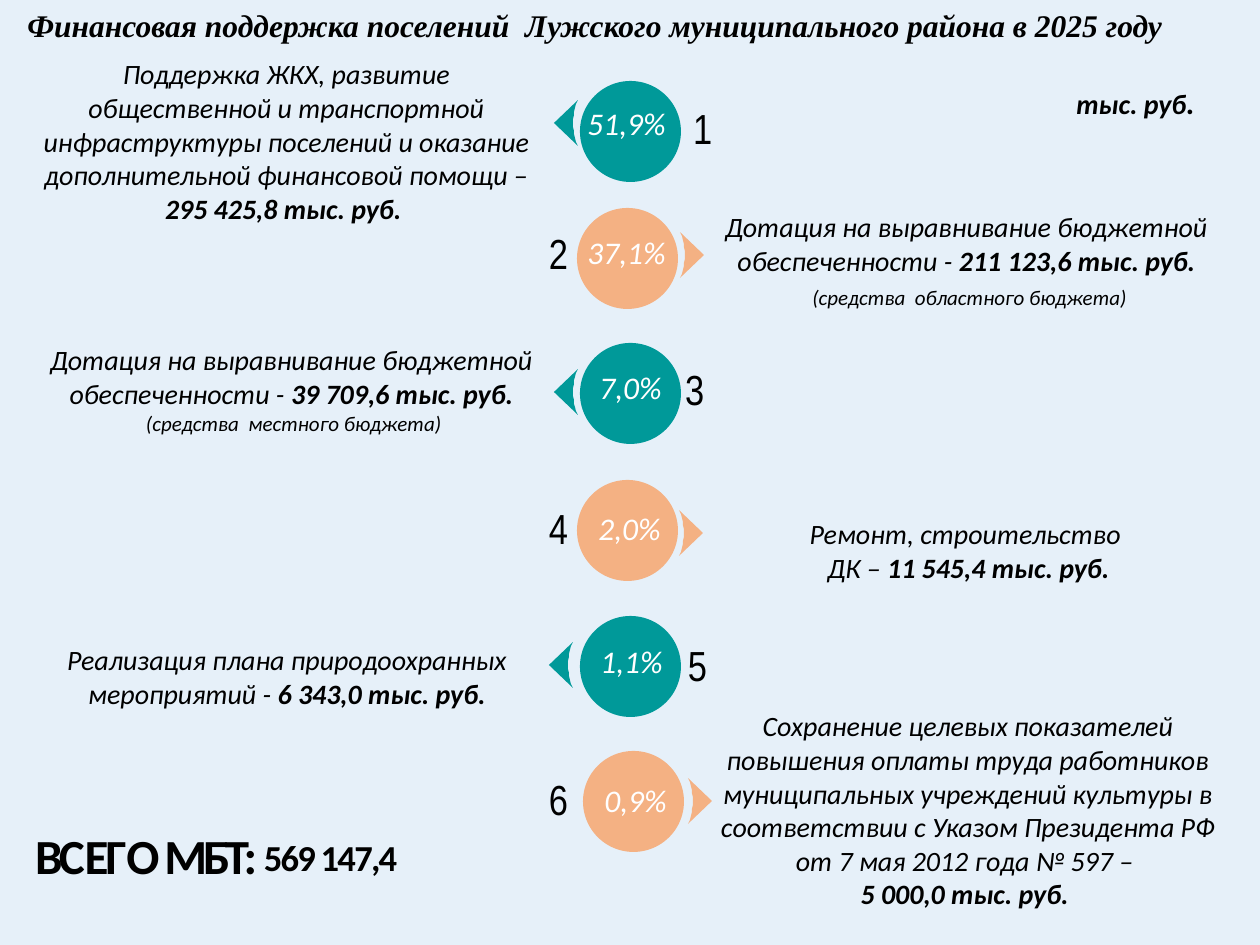
from dataclasses import dataclass

from pptx import Presentation
from pptx.dml.color import RGBColor
from pptx.enum.shapes import MSO_SHAPE as Shape
from pptx.enum.text import MSO_AUTO_SIZE as AutoSize, PP_ALIGN as Align
from pptx.util import Emu, Pt

SCALE = 914400 / 126
CIRCLE = 101
ARROW_LENGTH, ARROW_HALF_HEIGHT, ARROW_BULGE = 24, 23, 5
ARC_STEPS = 12


@dataclass(frozen=True)
class Theme:
    background: str = "E6F0F9"
    teal: str = "009999"
    peach: str = "F4B183"
    ink: str = "000000"
    white: str = "FFFFFF"
    body_font: str = "Calibri"
    title_font: str = "Times New Roman"
    number_font: str = "Arial Narrow"
    note: int = 12
    body: int = 16
    title: int = 18
    number: int = 24
    total_label: int = 28
    total_value: int = 36


THEME = Theme()

# number, percent, circle left/top, arrow tip x/y, percent box, number box
STEPS = [
    ("1", "51,9%", (580, 81), (554, 123), (575, 98, 106, 50), (693, 103, 9, 50)),
    ("2", "37,1%", (577, 208), (704, 255), (575, 227, 106, 50), (549, 228, 17, 50)),
    ("3", "7,0%", (580, 343), (554, 392), (587, 362, 91, 53), (685, 364, 17, 50)),
    ("4", "2,0%", (577, 480), (703, 533), (586, 503, 91, 53), (549, 503, 17, 50)),
    ("5", "1,1%", (580, 616), (549, 665), (588, 636, 91, 53), (688, 640, 17, 50)),
    ("6", "0,9%", (583, 751), (712, 801), (592, 775, 91, 53), (549, 774, 17, 50)),
]

# box, paragraphs made of (text, changes to the body style)
BOLD = {"bold": True}
NOTE = {"size": THEME.note}
DESCRIPTIONS = [
    ((33, 57, 507, 170), [[
        ("Поддержка ЖКХ, развитие общественной и транспортной инфраструктуры "
         "поселений и оказание дополнительной финансовой помощи – ", {}),
        ("295 425,8 тыс. руб. ", BOLD)]]),
    ((712, 210, 509, 102), [
        [("Дотация на выравнивание бюджетной обеспеченности - ", {}),
         ("211 123,6 тыс. руб.", BOLD)],
        [(" ", {}), ("(средства  областного бюджета)", NOTE)]]),
    ((34, 343, 515, 93), [
        [("Дотация на выравнивание бюджетной обеспеченности - ", {}),
         ("39 709,6 тыс. руб.", BOLD)],
        [(" (средства  местного бюджета)", NOTE)]]),
    ((722, 517, 493, 68), [
        [("Ремонт, строительство ", {})],
        [("ДК – ", {}), ("11 545,4 тыс. руб.", BOLD)]]),
    ((43, 643, 488, 68), [[
        ("Реализация плана природоохранных мероприятий - ", {}),
        ("6 343,0 тыс. руб.", BOLD)]]),
    ((721, 709, 494, 204), [
        [("Сохранение целевых показателей повышения оплаты труда работников "
          "муниципальных учреждений культуры в соответствии с Указом Президента "
          "РФ от 7 мая 2012 года № 597 – ", {})],
        [("5 000,0 тыс. руб. ", BOLD)]]),
]


def px(length):
    return Emu(round(length * SCALE))


def color(value):
    return RGBColor.from_string(value)


def paint(shape, fill):
    shape.shadow.inherit = False
    shape.fill.solid()
    shape.fill.fore_color.rgb = color(fill)
    shape.line.fill.background()


def add_circle(slide, left, top, fill):
    circle = slide.shapes.add_shape(Shape.OVAL, px(left), px(top), px(CIRCLE), px(CIRCLE))
    paint(circle, fill)


def add_arrow(slide, tip_x, tip_y, direction, fill):
    """Pointer whose back edge is hollowed; direction is -1 for left, 1 for right."""
    back_edge = []
    for step in range(ARC_STEPS + 1):
        t = 2 * step / ARC_STEPS - 1
        depth = ARROW_LENGTH - ARROW_BULGE * (1 - t * t)
        back_edge.append((tip_x - direction * depth, tip_y + t * ARROW_HALF_HEIGHT))
    builder = slide.shapes.build_freeform(tip_x, tip_y, scale=SCALE)
    builder.add_line_segments(back_edge, close=True)
    paint(builder.convert_to_shape(), fill)


def add_run(paragraph, text, size=THEME.body, font=THEME.body_font, fill=THEME.ink,
            bold=False, italic=True, spacing=None, baseline=None):
    """Spacing is in points, baseline in percent."""
    run = paragraph.add_run()
    run.text = text
    run.font.size = Pt(size)
    run.font.name = font
    run.font.bold = bold
    run.font.italic = italic
    run.font.color.rgb = color(fill)
    properties = run.font._element
    if spacing is not None:
        properties.set("spc", str(round(spacing * 100)))
    if baseline is not None:
        properties.set("baseline", str(baseline * 1000))


def add_text(slide, box, paragraphs, align=Align.LEFT, inset=True, wrap=True):
    frame = slide.shapes.add_textbox(*map(px, box)).text_frame
    frame.word_wrap = wrap
    frame.auto_size = AutoSize.SHAPE_TO_FIT_TEXT
    if not inset:
        frame.margin_left = frame.margin_right = 0
        frame.margin_top = frame.margin_bottom = 0
    for index, runs in enumerate(paragraphs):
        paragraph = frame.add_paragraph() if index else frame.paragraphs[0]
        paragraph.alignment = align
        for text, style in runs:
            add_run(paragraph, text, **style)
    return frame


def add_step(slide, number, percent, circle, tip, percent_box, number_box):
    points_left = int(number) % 2 == 1
    fill = THEME.teal if points_left else THEME.peach
    add_arrow(slide, *tip, -1 if points_left else 1, fill)
    add_circle(slide, *circle, fill)
    add_text(slide, percent_box, [[(percent, {"size": THEME.title, "fill": THEME.white})]])
    number_style = {"size": THEME.number, "font": THEME.number_font, "italic": False}
    add_text(slide, number_box, [[(number, number_style)]], Align.CENTER,
             inset=False, wrap=False)


def add_total(slide):
    label = {"size": THEME.total_label, "bold": True, "italic": False}
    letters = [("ВС", -2), ("ЕГ", -1.9), ("О ", -3.5), ("МБТ: ", -2.4)]
    runs = [(text, {**label, "spacing": spacing}) for text, spacing in letters]
    runs.append(("569 147,4", {**label, "size": THEME.total_value,
                               "spacing": -1, "baseline": 5}))
    frame = add_text(slide, (35, 811, 407, 78), [runs], inset=False)
    frame.margin_top = px(1)
    frame.paragraphs[0].space_before = Pt(0.9)


def main():
    presentation = Presentation()
    presentation.slide_width, presentation.slide_height = px(1260), px(945)
    slide = presentation.slides.add_slide(presentation.slide_layouts[6])
    background = slide.background.fill
    background.solid()
    background.fore_color.rgb = color(THEME.background)

    title_style = {"size": THEME.title, "font": THEME.title_font, "bold": True}
    add_text(slide, (15, 0, 1240, 46), [[
        ("Финансовая поддержка поселений  Лужского муниципального района в 2025 году",
         title_style)]])
    add_text(slide, (1056, 77, 159, 50), [[
        ("тыс. руб", BOLD), (".", {**BOLD, "size": THEME.title})]], Align.CENTER)
    for step in STEPS:
        add_step(slide, *step)
    for box, paragraphs in DESCRIPTIONS:
        add_text(slide, box, paragraphs, Align.CENTER, inset=False)
    add_total(slide)
    presentation.save("out.pptx")


if __name__ == "__main__":
    main()
